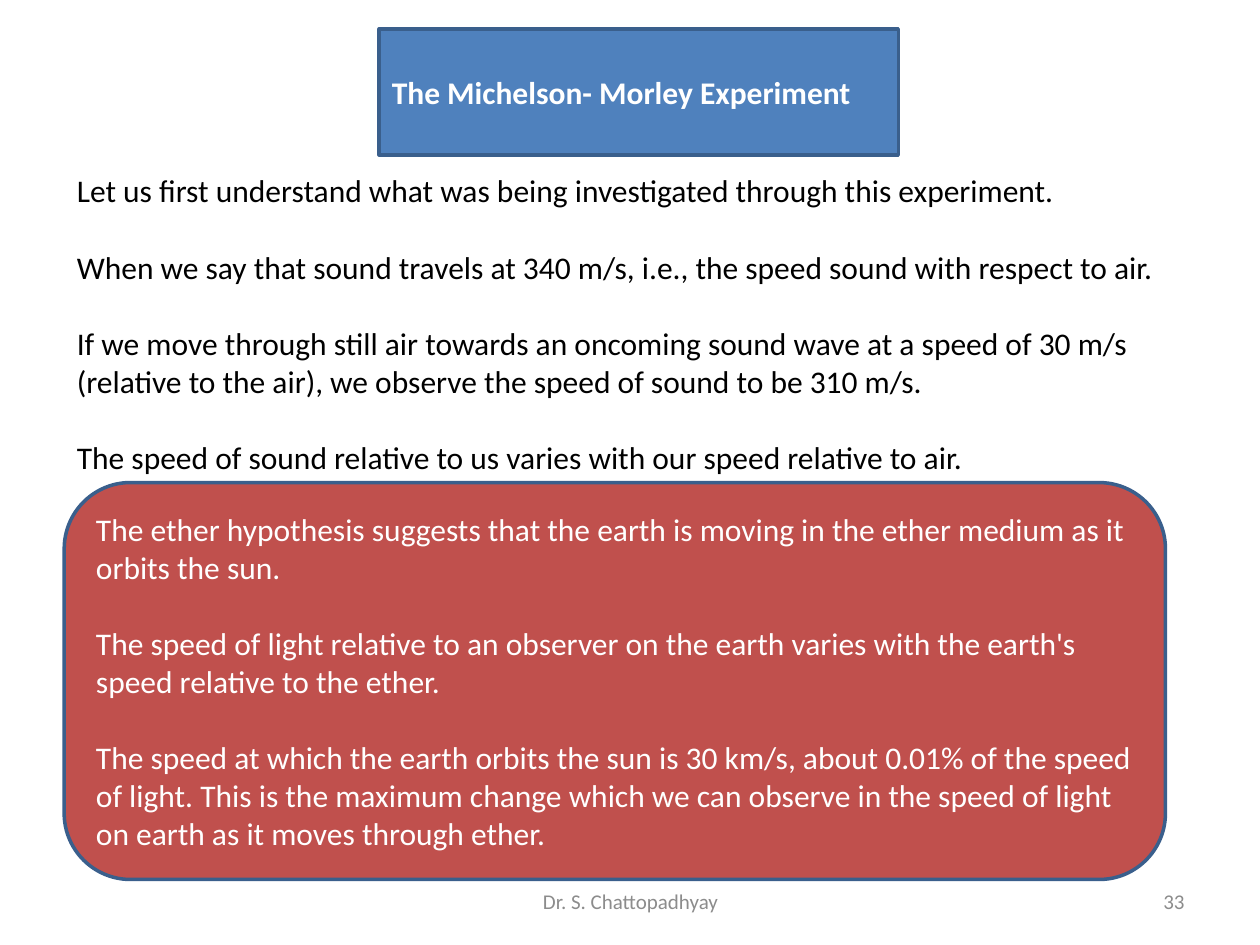
from dataclasses import dataclass

from lxml import etree
from pptx import Presentation
from pptx.dml.color import RGBColor
from pptx.enum import shapes, text
from pptx.oxml import ns
from pptx.util import Inches, Pt


@dataclass(frozen=True)
class Theme:
    font: str = "Calibri"
    title_fill: RGBColor = RGBColor(0x4F, 0x81, 0xBD)
    ether_fill: RGBColor = RGBColor(0xC0, 0x50, 0x4D)
    outline: RGBColor = RGBColor(0x3A, 0x5F, 0x8C)
    light: RGBColor = RGBColor(0xFF, 0xFF, 0xFF)
    dark: RGBColor = RGBColor(0, 0, 0)
    muted: RGBColor = RGBColor(0x8C, 0x8C, 0x8C)
    text_size: int = 18
    footer_size: int = 12
    gap: int = 22


@dataclass(frozen=True)
class Box:
    left: float
    top: float
    width: float
    height: float

    def lengths(self) -> tuple:
        return tuple(Inches(v) for v in (self.left, self.top, self.width, self.height))


@dataclass(frozen=True)
class Line:
    words: str
    gap_before: bool = True


@dataclass(frozen=True)
class FooterPart:
    words: str
    box: Box
    align: text.PP_ALIGN


THEME = Theme()
TITLE_BOX = Box(3.01, 0.23, 4.12, 1)
SOUND_BOX = Box(0.51, 1.31, 8.9, 2.52)
ETHER_BOX = Box(0.51, 3.83, 8.74, 3.15)

SOUND = [
    Line("Let us first understand what was being investigated through this experiment."),
    Line("When we say that sound travels at 340 m/s, i.e., the speed sound with respect to air."),
    Line("If we move through still air towards an oncoming sound wave at a speed of 30 m/s "
         "(relative to the air), we observe the speed of sound to be 310 m/s."),
    Line("The speed of sound relative to us varies with our speed relative to air."),
]
ETHER = [
    Line("The ether hypothesis suggests that the earth is moving in the ether medium as it"),
    Line("orbits the sun.", gap_before=False),
    Line("The speed of light relative to an observer on the earth varies with the earth's "
         "speed relative to the ether."),
    Line("The speed at which the earth orbits the sun is 30 km/s, about 0.01% of the speed "
         "of light. This is the maximum change which we can observe in the speed of light "
         "on earth as it moves through ether."),
]
FOOTER = [
    FooterPart("Dr. S. Chattopadhyay", Box(3.42, 6.95, 3.17, 0.4), text.PP_ALIGN.CENTER),
    FooterPart("33", Box(7.17, 6.95, 2.33, 0.4), text.PP_ALIGN.RIGHT),
]


def place(shape, box: Box) -> None:
    shape.left, shape.top, shape.width, shape.height = box.lengths()


def paint(shape, fill: RGBColor) -> None:
    shape.fill.solid()
    shape.fill.fore_color.rgb = fill
    shape.line.color.rgb = THEME.outline
    shape.line.width = Pt(2)


def round_corners(placeholder) -> None:
    geometry = etree.Element(ns.qn("a:prstGeom"), prst="roundRect")
    etree.SubElement(geometry, ns.qn("a:avLst"))
    placeholder._element.spPr.find(ns.qn("a:xfrm")).addnext(geometry)


def write(shape, lines: list[Line], color: RGBColor, size: int = THEME.text_size,
          bold: bool = False, align=text.PP_ALIGN.LEFT,
          anchor=text.MSO_ANCHOR.MIDDLE) -> None:
    frame = shape.text_frame
    frame.word_wrap = True
    frame.auto_size = text.MSO_AUTO_SIZE.NONE
    frame.vertical_anchor = anchor
    for index, line in enumerate(lines):
        paragraph = frame.add_paragraph() if index else frame.paragraphs[0]
        paragraph.text = line.words
        properties = paragraph._p.get_or_add_pPr()
        properties.set("marL", "0")
        properties.set("indent", "0")
        etree.SubElement(properties, ns.qn("a:buNone"))
        paragraph.alignment = align
        paragraph.space_before = Pt(THEME.gap if index and line.gap_before else 0)
        paragraph.font.name = THEME.font
        paragraph.font.size = Pt(size)
        paragraph.font.bold = bold
        paragraph.font.color.rgb = color


def main() -> None:
    deck = Presentation()
    deck.slide_width, deck.slide_height = Inches(10), Inches(7.5)
    slide = deck.slides.add_slide(deck.slide_layouts[1])

    for part in FOOTER:
        write(slide.shapes.add_textbox(*part.box.lengths()), [Line(part.words)],
              THEME.muted, THEME.footer_size, align=part.align)

    title = slide.shapes.title
    place(title, TITLE_BOX)
    round_corners(title)
    paint(title, THEME.title_fill)
    write(title, [Line("The Michelson- Morley Experiment")], THEME.light, bold=True)

    sound = slide.placeholders[1]
    place(sound, SOUND_BOX)
    write(sound, SOUND, THEME.dark, anchor=text.MSO_ANCHOR.TOP)

    ether = slide.shapes.add_shape(shapes.MSO_SHAPE.ROUNDED_RECTANGLE, *ETHER_BOX.lengths())
    ether.shadow.inherit = False
    paint(ether, THEME.ether_fill)
    write(ether, ETHER, THEME.light)

    deck.save("out.pptx")


if __name__ == "__main__":
    main()
